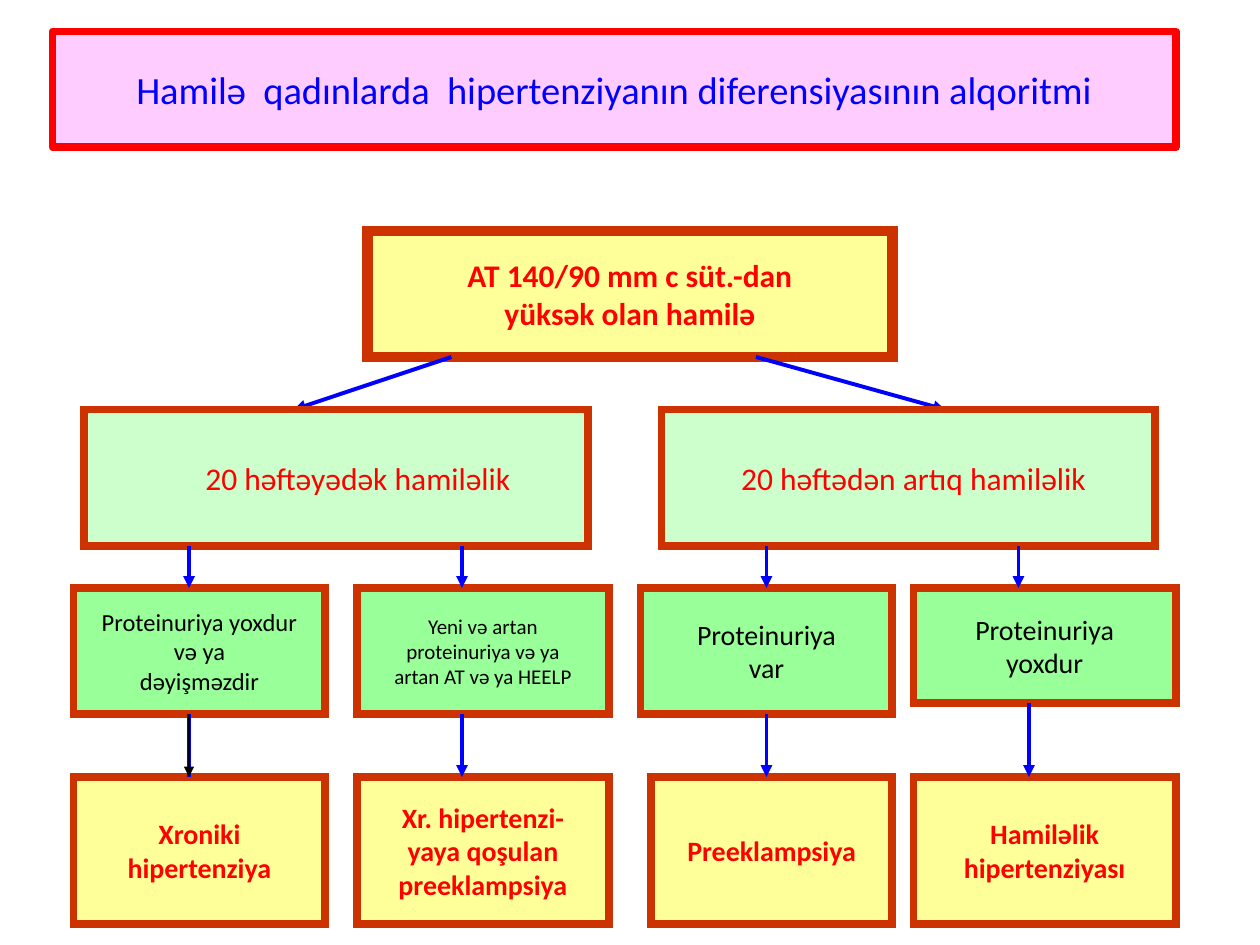
from lxml import etree
from pptx import Presentation
from pptx import util as u
from pptx.dml.color import RGBColor
from pptx.enum import shapes, text
from pptx.oxml.ns import qn

COLOURS = {
    "title": "FFCCFF", "title_edge": "FF0000", "edge": "CC3300",
    "yellow": "FFFF99", "pale": "CCFFCC", "green": "99FF99",
    "red": "FF0000", "blue": "0000FF", "black": "000000",
}
FONT = "Calibri"
COLUMNS, ROWS = 120, 90  # grid units over the whole slide

deck = Presentation()
deck.slide_width, deck.slide_height = u.Inches(10), u.Inches(7.5)


def colour(name):
    return RGBColor.from_string(COLOURS[name])


def across(column):
    return round(deck.slide_width * column / COLUMNS)


def down(row):
    return round(deck.slide_height * row / ROWS)


def place(shape, box):
    left, top, width, height = box
    shape.left, shape.top = across(left), down(top)
    shape.width, shape.height = across(width), down(height)


def paint(shape, fill, edge, weight):
    shape.fill.solid()
    shape.fill.fore_color.rgb = colour(fill)
    shape.line.color.rgb = colour(edge)
    shape.line.width = u.Pt(weight)


def write(shape, lines, size, ink, bold=False):
    frame = shape.text_frame
    frame.vertical_anchor = text.MSO_ANCHOR.MIDDLE
    for number, line in enumerate(lines):
        para = frame.add_paragraph() if number else frame.paragraphs[0]
        para.alignment = text.PP_ALIGN.CENTER
        span = para.add_run()
        span.text = line
        span.font.name, span.font.size = FONT, u.Pt(size)
        span.font.bold = bold
        span.font.color.rgb = colour(ink)


def add_title(page, box):
    title = page.shapes.title
    place(title, box)
    paint(title, "title", "title_edge", 4.5)
    title.text_frame.auto_size = text.MSO_AUTO_SIZE.NONE
    write(title, ["Hamilə  qadınlarda  hipertenziyanın diferensiyasının alqoritmi"], 22, "blue")
    etree.SubElement(title.line._get_or_add_ln(), qn("a:round"))


def add_step(page, box, lines, fill, size, ink, bold=False, weight=4.5, shift=0):
    """One box of the flow; shift widens the left inset, in points."""
    step = page.shapes.add_shape(shapes.MSO_SHAPE.RECTANGLE, 0, 0, 0, 0)
    place(step, box)
    step.shadow.inherit = False
    paint(step, fill, "edge", weight)
    etree.SubElement(step.line._get_or_add_ln(), qn("a:miter"), lim="800000")
    step.text_frame.word_wrap = False
    step.text_frame.margin_left = u.Pt(7.2 + shift)
    write(step, lines, size, ink, bold)
    return step


def add_arrow(page, start, end, ink="blue", weight=2.25, head=True):
    arrow = page.shapes.add_connector(
        shapes.MSO_CONNECTOR.STRAIGHT,
        across(start[0]), down(start[1]), across(end[0]), down(end[1]))
    arrow.line.color.rgb = colour(ink)
    arrow.line.width = u.Pt(weight)
    if head:
        etree.SubElement(arrow.line._get_or_add_ln(), qn("a:tailEnd"), type="triangle")
    etree.SubElement(arrow._element.spPr, qn("a:effectLst"))
    return arrow


def add_root(page, box):
    add_step(page, box, ["AT 140/90 mm c süt.-dan", "yüksək olan hamilə"],
             "yellow", 18, "red", bold=True, weight=6)
    bottom = box[1] + box[3]
    for start, end in ((43, 28), (72, 90)):
        add_arrow(page, (start, bottom), (end, bottom + 5))


def add_branch(page, box, line, shift):
    add_step(page, box, [line], "pale", 18, "red", shift=shift)


def add_outcome(page, finding_box, finding, size, diagnosis_box, diagnosis,
                entry, leave, double=False):
    """A finding, the diagnosis below it and the arrows into each."""
    finding_step = add_step(page, finding_box, finding, "green", size, "black")
    add_step(page, diagnosis_box, diagnosis, "yellow", 16, "red", bold=True)
    left, top, width, height = finding_box
    inward = add_arrow(page, (entry, top - 4), (entry, top))
    ends = (leave, top + height), (leave, diagnosis_box[1])
    onward = add_arrow(page, *ends, head=not double)
    if double:
        add_arrow(page, *ends, ink="black", weight=0.75)
    middle = left + width / 2
    if entry == middle:
        inward.end_connect(finding_step, 0)
    if leave == middle:
        onward.begin_connect(finding_step, 2)


def main():
    page = deck.slides.add_slide(deck.slide_layouts[5])
    add_title(page, (5, 3, 107, 11))
    add_root(page, (35, 22, 50, 12))

    # Length of pregnancy
    add_branch(page, (8, 39, 48, 13), "20 həftəyədək hamiləlik", 25)
    add_branch(page, (63, 39, 47, 13), "20 həftədən artıq hamiləlik", 6)

    # Findings and diagnoses, column by column
    add_outcome(page, (7, 56, 24, 12), ["Proteinuriya yoxdur", "və ya", "dəyişməzdir"], 14,
                (7, 74, 24, 14), ["Xroniki", "hipertenziya"], 18, 18, double=True)
    add_outcome(page, (34, 56, 24, 12),
                ["Yeni və artan", "proteinuriya və ya", "artan AT və ya HEELP"], 12,
                (34, 74, 24, 14), ["Xr. hipertenzi-", "yaya qoşulan", "preeklampsiya"], 44, 44)
    add_outcome(page, (61, 56, 24, 12), ["Proteinuriya", "var"], 16,
                (62, 74, 23, 14), ["Preeklampsiya"], 73, 73)
    add_outcome(page, (87, 56, 25, 11), ["Proteinuriya", "yoxdur"], 16,
                (87, 74, 25, 14), ["Hamiləlik", "hipertenziyası"], 97, 98)

    deck.save("out.pptx")


if __name__ == "__main__":
    main()
